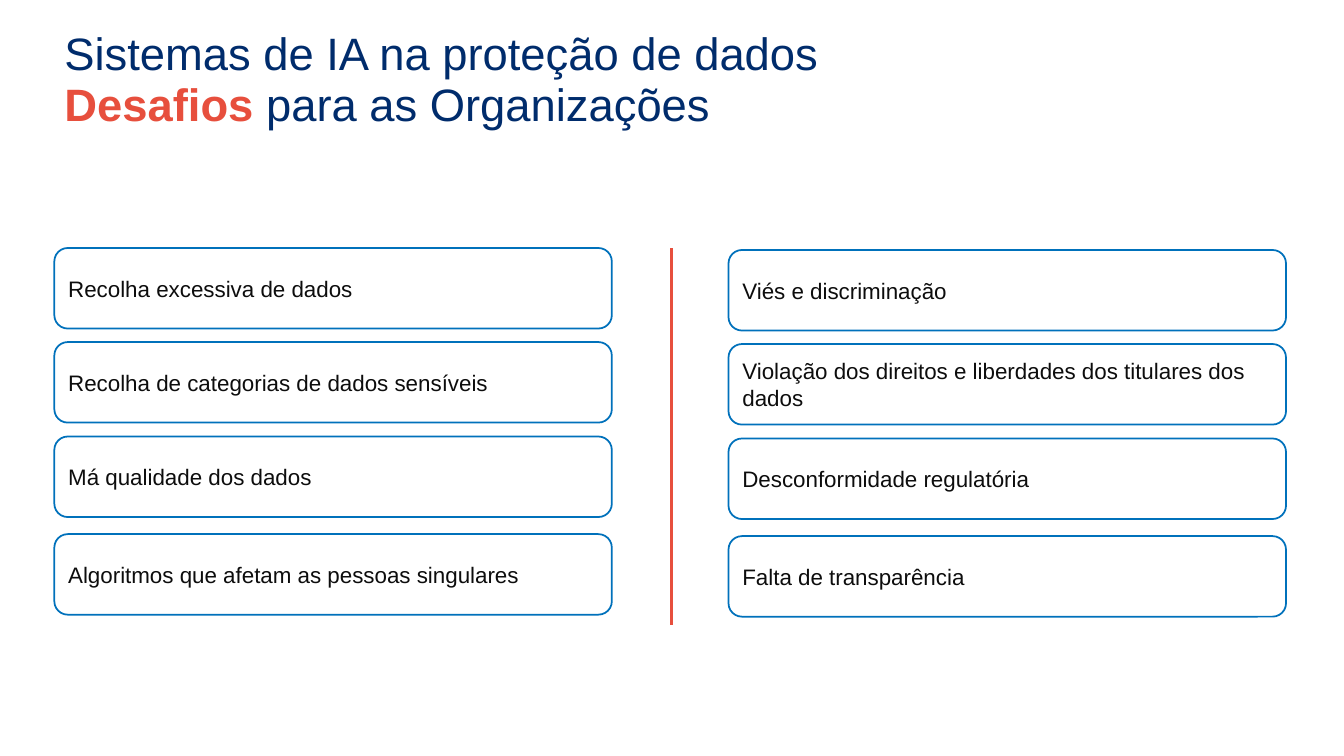
from lxml import etree
from pptx import Presentation
from pptx import util as u
from pptx.dml.color import RGBColor
from pptx.enum import shapes, text
from pptx.oxml.ns import qn

NAVY, RED, BLUE, INK = "002C6C", "E74F3D", "0071BB", "0D0D0D"
FONT = "Arial"
BOX_W, BOX_H = 14.05, 2.03
ROW_OFFSETS = (0, 2.37, 4.75, 7.21)
# Left edge, top edge and box labels, in centimetres
COLUMNS = (
    (1.37, 6.25, ("Recolha excessiva de dados",
                  "Recolha de categorias de dados sensíveis",
                  "Má qualidade dos dados",
                  "Algoritmos que afetam as pessoas singulares")),
    (18.36, 6.3, ("Viés e discriminação",
                  "Violação dos direitos e liberdades dos titulares dos dados",
                  "Desconformidade regulatória",
                  "Falta de transparência")),
)


def rgb(value):
    return RGBColor.from_string(value)


def add_run(p, content, size, color, bold=False):
    r = p.add_run()
    r.text = content
    r.font.name = FONT
    r.font.size = u.Pt(size)
    r.font.bold = bold
    r.font.color.rgb = rgb(color)


def fill_title(sp):
    sp.left, sp.top, sp.width, sp.height = u.Cm(1.37), u.Cm(0.97), u.Cm(28.17), u.Cm(2.49)
    tf = sp.text_frame
    tf.auto_size = text.MSO_AUTO_SIZE.NONE
    tf.vertical_anchor = text.MSO_ANCHOR.BOTTOM
    p = tf.paragraphs[0]
    p.alignment = text.PP_ALIGN.LEFT
    p.line_spacing = 0.94
    p.space_before = u.Pt(0)
    add_run(p, "Sistemas de IA na proteção de dados", 32.4, NAVY)
    p.add_line_break()
    add_run(p, "Desafios", 32.4, RED, bold=True)
    add_run(p, " para as Organizações", 32.4, NAVY)


def add_divider(s, x, top, bottom):
    line = s.shapes.add_connector(shapes.MSO_CONNECTOR.STRAIGHT,
                                  u.Cm(x), u.Cm(top), u.Cm(x), u.Cm(bottom))
    line.line.color.rgb = rgb(RED)
    line.line.width = u.Pt(2.5)
    etree.SubElement(line._element.spPr, qn("a:effectLst"))


def add_box(s, left, top, label):
    sp = s.shapes.add_shape(shapes.MSO_SHAPE.ROUNDED_RECTANGLE,
                            u.Cm(left), u.Cm(top), u.Cm(BOX_W), u.Cm(BOX_H))
    sp.shadow.inherit = False
    sp.fill.background()
    sp.line.color.rgb = rgb(BLUE)
    sp.line.width = u.Pt(1.25)
    tf = sp.text_frame
    tf.word_wrap = True
    tf.vertical_anchor = text.MSO_ANCHOR.MIDDLE
    p = tf.paragraphs[0]
    p.alignment = text.PP_ALIGN.LEFT
    add_run(p, label, 16, INK)


def main():
    prs = Presentation()
    prs.slide_width, prs.slide_height = u.Cm(33.87), u.Cm(19.05)
    s = prs.slides.add_slide(prs.slide_layouts.get_by_name("Title Only"))
    fill_title(s.shapes.title)
    add_divider(s, 16.92, 6.25, 15.75)
    for left, top, labels in COLUMNS:
        for offset, label in zip(ROW_OFFSETS, labels):
            add_box(s, left, top + offset, label)
    prs.save("out.pptx")


if __name__ == "__main__":
    main()
